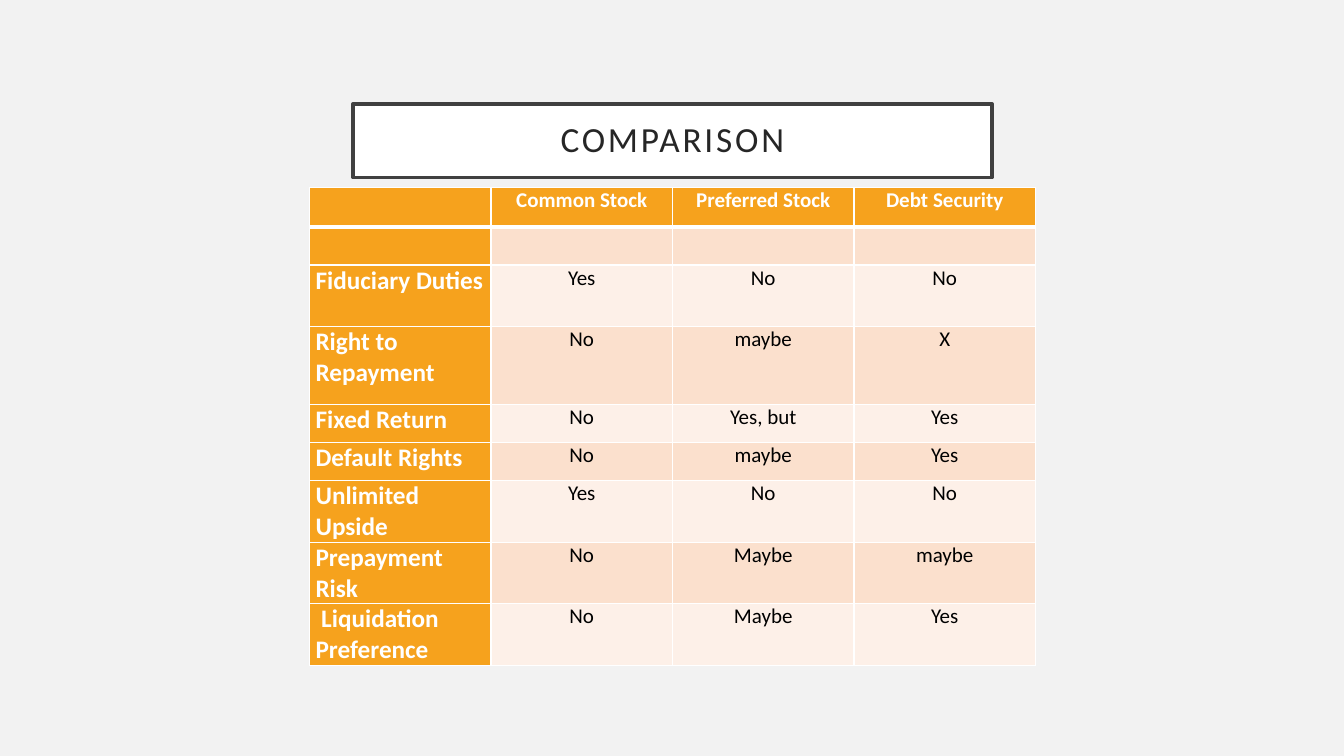
from dataclasses import dataclass

from lxml import etree
from pptx import Presentation
from pptx.dml.color import RGBColor
from pptx.enum import text
from pptx.oxml import ns
from pptx.util import Inches, Pt

# Content
TITLE = "COMPARISON"
ROWS = [
    ("", "Common Stock", "Preferred Stock", "Debt Security"),
    ("", "", "", ""),
    ("Fiduciary Duties", "Yes", "No", "No"),
    ("Right to Repayment", "No", "maybe", "X"),
    ("Fixed Return", "No", "Yes, but", "Yes"),
    ("Default Rights", "No", "maybe", "Yes"),
    ("Unlimited Upside", "Yes", "No", "No"),
    ("Prepayment Risk", "No", "Maybe", "maybe"),
    (" Liquidation Preference", "No", "Maybe", "Yes"),
]
ROW_HEIGHTS = [0.39, 0.38, 0.61, 0.77, 0.38, 0.38, 0.61, 0.61, 0.61]
COLUMN_WIDTH = 1.8


@dataclass(frozen=True)
class Theme:
    font: str = "Calibri"
    background: str = "F2F2F2"
    white: str = "FFFFFF"
    title_text: str = "262626"
    title_line: str = "404040"
    accent: str = "F6A21D"
    bands: tuple = ("FDF0E8", "FBE0CD")
    body_text: str = "000000"
    title_size: float = 25.2
    label_size: int = 18
    body_size: int = 15


THEME = Theme()


def rgb(value):
    return RGBColor.from_string(value)


def style_font(font, size, color, bold=False):
    font.name, font.size, font.bold = THEME.font, Pt(size), bold
    font.color.rgb = rgb(color)


def set_borders(cell, bottom_width, top_width):
    """Draw white cell edges; call before filling, as lines precede the fill."""
    properties = cell._tc.get_or_add_tcPr()
    edges = {"lnL": 1, "lnR": 1, "lnT": top_width, "lnB": bottom_width}
    for edge, width in edges.items():
        line = etree.SubElement(properties, ns.qn(f"a:{edge}"), w=str(Pt(width)))
        fill = etree.SubElement(line, ns.qn("a:solidFill"))
        etree.SubElement(fill, ns.qn("a:srgbClr"), val=THEME.white)


def add_title(slide):
    title = slide.shapes.title
    title.left, title.top = Inches(3.5), Inches(1.03)
    title.width, title.height = Inches(6.34), Inches(0.73)
    title.fill.solid()
    title.fill.fore_color.rgb = rgb(THEME.white)
    title.line.color.rgb = rgb(THEME.title_line)
    title.line.width = Pt(2.5)

    frame = title.text_frame
    frame.text = TITLE
    frame.word_wrap = True
    frame.auto_size = text.MSO_AUTO_SIZE.NONE
    frame.vertical_anchor = text.MSO_ANCHOR.MIDDLE
    frame.margin_left = frame.margin_right = Inches(0.2)
    frame.margin_top = frame.margin_bottom = Inches(0.2)
    paragraph = frame.paragraphs[0]
    paragraph.alignment = text.PP_ALIGN.CENTER
    paragraph.line_spacing = 0.9
    style_font(paragraph.font, THEME.title_size, THEME.title_text)
    # Letter spacing, in hundredths of a point
    paragraph.runs[0].font._element.set("spc", "200")


def format_cell(cell, row, column, value):
    is_header, is_label = row == 0, column == 0
    is_accent = is_header or is_label
    set_borders(cell, 3 if is_header else 1, 3 if row == 1 else 1)
    cell.fill.solid()
    cell.fill.fore_color.rgb = rgb(THEME.accent if is_accent else THEME.bands[row % 2])
    cell.margin_left = cell.margin_right = Inches(0.06)
    cell.margin_top = cell.margin_bottom = 0

    cell.text = value
    paragraph = cell.text_frame.paragraphs[0]
    paragraph.alignment = text.PP_ALIGN.LEFT if is_label else text.PP_ALIGN.CENTER
    style_font(
        paragraph.font,
        THEME.label_size if is_label else THEME.body_size,
        THEME.white if is_accent else THEME.body_text,
        bold=is_accent,
    )


def add_comparison_table(slide):
    column_count = len(ROWS[0])
    table = slide.shapes.add_table(
        len(ROWS), column_count, Inches(3.07), Inches(1.86),
        Inches(COLUMN_WIDTH * column_count), Inches(sum(ROW_HEIGHTS)),
    ).table
    table.first_col = True
    for column in table.columns:
        column.width = Inches(COLUMN_WIDTH)
    for row, (values, height) in enumerate(zip(ROWS, ROW_HEIGHTS)):
        table.rows[row].height = Inches(height)
        for column, value in enumerate(values):
            format_cell(table.cell(row, column), row, column, value)


def main():
    presentation = Presentation()
    presentation.slide_width, presentation.slide_height = Inches(13.33), Inches(7.5)
    slide = presentation.slides.add_slide(presentation.slide_layouts[5])
    slide.background.fill.solid()
    slide.background.fill.fore_color.rgb = rgb(THEME.background)
    add_title(slide)
    add_comparison_table(slide)
    presentation.save("out.pptx")


if __name__ == "__main__":
    main()
